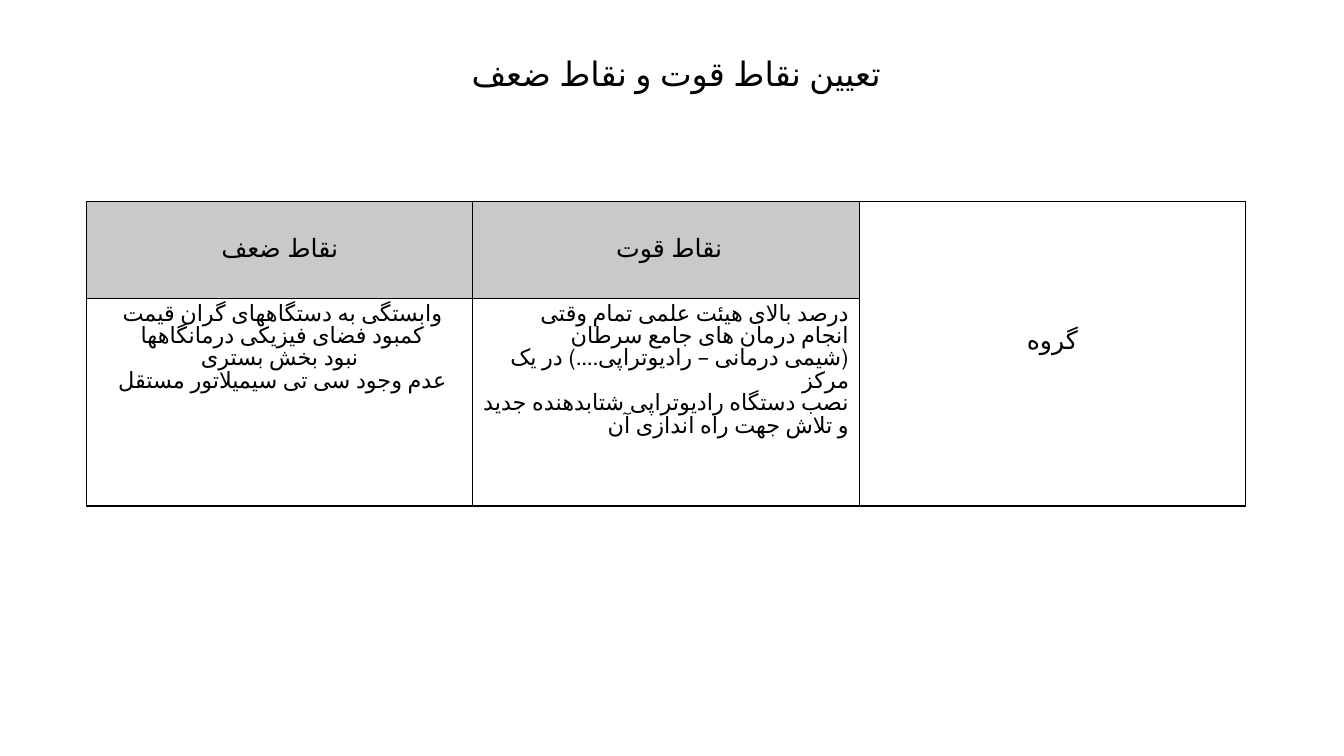
from dataclasses import dataclass

from lxml.etree import SubElement
from pptx import Presentation
from pptx.dml.color import RGBColor
from pptx.enum.lang import MSO_LANGUAGE_ID
from pptx.enum.text import MSO_ANCHOR, PP_ALIGN
from pptx.oxml.ns import qn
from pptx.util import Cm, Pt

BLACK = RGBColor(0x00, 0x00, 0x00)
WHITE = RGBColor(0xFF, 0xFF, 0xFF)
GREY = RGBColor(0xC9, 0xC9, 0xC9)
FONT = "Calibri"
TABLE_WIDTH = Cm(29.21)
ROW_HEIGHTS = (Cm(2.44), Cm(5.23))


@dataclass(frozen=True)
class CellText:
    row: int
    col: int
    lines: tuple[str, ...]
    size: int = 18
    fill: RGBColor = WHITE
    align: PP_ALIGN = PP_ALIGN.CENTER
    anchor: MSO_ANCHOR = MSO_ANCHOR.MIDDLE
    margin_bottom: float = 0.13


WEAKNESSES = (
    "وابستگی به دستگاههای گران قیمت ",
    "کمبود فضای فیزیکی درمانگاهها ",
    "نبود بخش بستری",
    "عدم وجود سی تی سیمیلاتور مستقل ",
)
STRENGTHS = (
    "درصد بالای هیئت علمی تمام وقتی",
    "انجام درمان های جامع سرطان ",
    "(شیمی درمانی – رادیوتراپی....) در یک مرکز ",
    "نصب دستگاه رادیوتراپی شتابدهنده جدید و تلاش جهت راه اندازی آن ",
)
CELLS = (
    CellText(0, 0, ("نقاط ضعف",), fill=GREY),
    CellText(0, 1, ("نقاط قوت ",), fill=GREY),
    CellText(0, 2, ("گروه",), margin_bottom=0.74),
    CellText(1, 0, WEAKNESSES, size=16, anchor=MSO_ANCHOR.TOP),
    CellText(1, 1, STRENGTHS, size=16, align=PP_ALIGN.RIGHT, anchor=MSO_ANCHOR.TOP),
)


def write_lines(tf, lines: tuple[str, ...], size: int, align: PP_ALIGN) -> None:
    """Fill a text frame with right-to-left Persian paragraphs."""
    tf.text = "\n".join(lines)
    for p in tf.paragraphs:
        p.alignment = align
        p.font.name = FONT
        p.font.size = Pt(size)
        p.font.color.rgb = BLACK
        p._p.get_or_add_pPr().set("rtl", "1")
        for r in p.runs:
            r.font.language_id = MSO_LANGUAGE_ID.FARSI


def add_borders(cell) -> None:
    tcPr = cell._tc.get_or_add_tcPr()
    for side in ("lnL", "lnR", "lnT", "lnB"):
        ln = SubElement(tcPr, qn(f"a:{side}"), w=str(Pt(1)))
        fill = SubElement(ln, qn("a:solidFill"))
        SubElement(fill, qn("a:srgbClr"), val=str(BLACK))


def add_title(slide) -> None:
    sp = slide.shapes.title
    sp.left, sp.top, sp.width, sp.height = Cm(2.33), Cm(1.01), Cm(29.21), Cm(3.68)
    tf = sp.text_frame
    tf.vertical_anchor = MSO_ANCHOR.MIDDLE
    tf.margin_bottom = Cm(2.02)
    write_lines(tf, ("تعیین نقاط قوت و نقاط ضعف ",), 24, PP_ALIGN.CENTER)
    tf.paragraphs[0].line_spacing = 0.9


def add_strengths_table(slide) -> None:
    table = slide.shapes.add_table(
        2, 3, Cm(2.18), Cm(5.08), TABLE_WIDTH, sum(ROW_HEIGHTS)
    ).table
    table.first_row = table.horz_banding = False
    for row, height in zip(table.rows, ROW_HEIGHTS):
        row.height = height
    for cell in table.iter_cells():
        add_borders(cell)
        cell.fill.solid()
        cell.fill.fore_color.rgb = WHITE
    table.cell(0, 2).merge(table.cell(1, 2))
    for item in CELLS:
        cell = table.cell(item.row, item.col)
        cell.fill.fore_color.rgb = item.fill
        cell.vertical_anchor = item.anchor
        cell.margin_bottom = Cm(item.margin_bottom)
        write_lines(cell.text_frame, item.lines, item.size, item.align)


def main() -> None:
    prs = Presentation()
    prs.slide_width, prs.slide_height = Cm(33.87), Cm(19.05)
    slide = prs.slides.add_slide(prs.slide_layouts[5])
    add_title(slide)
    add_strengths_table(slide)
    prs.save("out.pptx")


if __name__ == "__main__":
    main()
